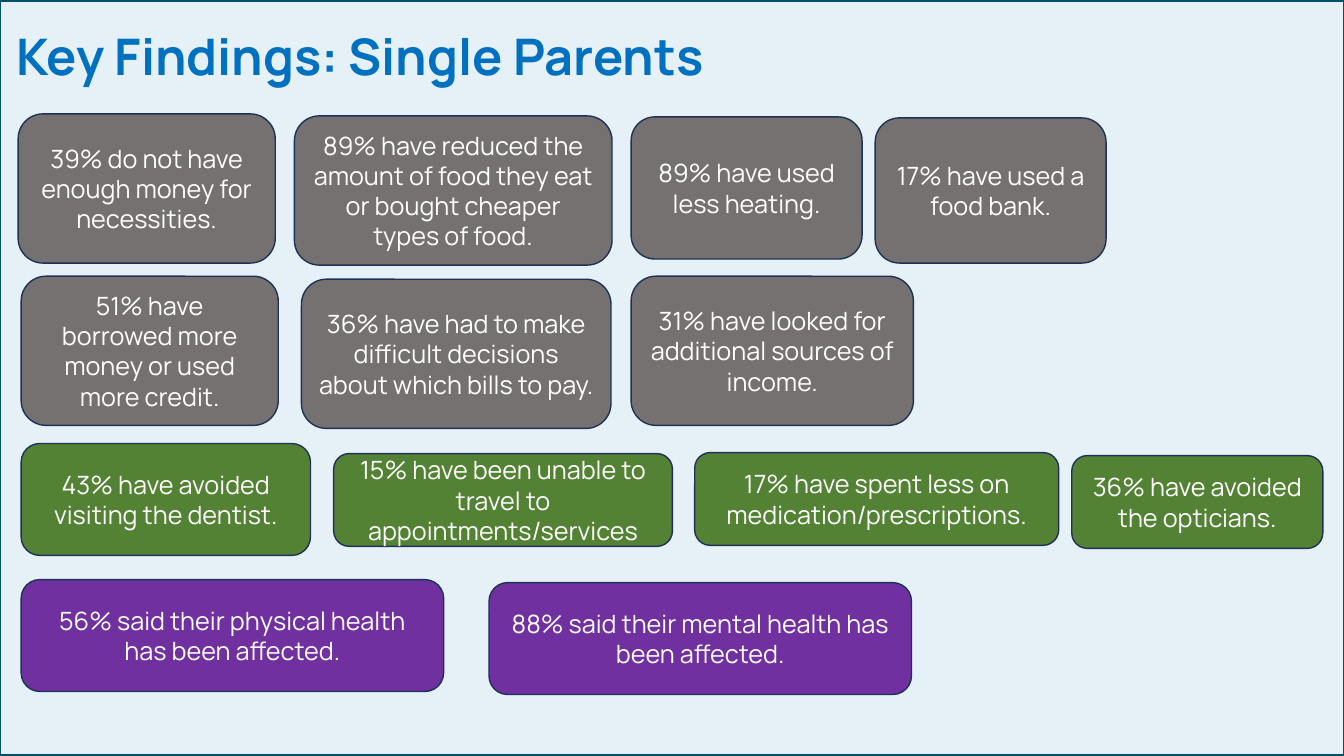
from dataclasses import dataclass

from pptx import Presentation
from pptx.dml.color import RGBColor
from pptx.enum.shapes import MSO_SHAPE as Shape
from pptx.enum.text import MSO_ANCHOR as Anchor, MSO_AUTO_SIZE as AutoSize, PP_ALIGN as Align
from pptx.slide import Slide
from pptx.text.text import Font
from pptx.util import Inches, Length, Pt

BACKGROUND = RGBColor(0xE6, 0xF1, 0xF7)
FRAME_TEAL = RGBColor(0x00, 0x4F, 0x6B)
TITLE_BLUE = RGBColor(0x00, 0x70, 0xC0)
OUTLINE_NAVY = RGBColor(0x1E, 0x32, 0x56)
MONEY_GREY = RGBColor(0x76, 0x71, 0x71)
ACCESS_GREEN = RGBColor(0x54, 0x82, 0x35)
HEALTH_PURPLE = RGBColor(0x70, 0x30, 0xA0)
WHITE = RGBColor(0xFF, 0xFF, 0xFF)

TYPEFACE = "Manrope"
COLUMNS, ROWS = 133.3, 75
CELL = Inches(0.1)


@dataclass(frozen=True)
class Box:
    """Left and width in grid columns, top and height in grid rows."""
    left: float
    top: float
    width: float
    height: float

    def lengths(self) -> list[Length]:
        return [grid(n) for n in (self.left, self.top, self.width, self.height)]


@dataclass(frozen=True)
class Finding:
    text: str
    box: Box


@dataclass(frozen=True)
class Theme:
    colour: RGBColor
    findings: tuple[Finding, ...]


THEMES = (
    Theme(MONEY_GREY, (
        Finding("39% do not have enough money for necessities.", Box(1.8, 11.3, 25.5, 14.8)),
        Finding("89% have reduced the amount of food they eat or bought cheaper types of food.",
                Box(29.2, 11.5, 31.5, 14.8)),
        Finding("89% have used less heating.", Box(62.6, 11.6, 22.9, 14.1)),
        Finding("17% have used a food bank.", Box(86.8, 11.7, 22.9, 14.4)),
        Finding("51% have borrowed more money or used more credit.", Box(2.1, 27.4, 25.5, 14.8)),
        Finding("36% have had to make difficult decisions about which bills to pay.",
                Box(29.9, 27.7, 30.7, 14.8)),
        Finding("31% have looked for additional sources of income.", Box(62.6, 27.4, 28, 14.8)),
    )),
    Theme(ACCESS_GREEN, (
        Finding("43% have avoided visiting the dentist.", Box(2.1, 44, 28.7, 11.1)),
        Finding("15% have been unable to travel to appointments/services", Box(33.1, 45, 33.6, 9.2)),
        Finding("17% have spent less on medication/prescriptions.", Box(68.9, 44.9, 36.1, 9.2)),
        Finding("36% have avoided the opticians.", Box(106.3, 45.2, 24.9, 9.2)),
    )),
    Theme(HEALTH_PURPLE, (
        Finding("56% said their physical health has been affected.", Box(2.1, 57.5, 41.9, 11.1)),
        Finding("88% said their mental health has been affected.", Box(48.5, 57.8, 41.9, 11.1)),
    )),
)


def grid(cells: float) -> Length:
    return Length(round(cells * CELL))


def style_font(font: Font, size: int, colour: RGBColor, bold: bool = False) -> None:
    font.name = TYPEFACE
    font.size = Pt(size)
    font.bold = bold
    font.color.rgb = colour


def draw_frame(slide: Slide) -> None:
    frame = slide.shapes.add_shape(Shape.RECTANGLE, *Box(-0.1, 0, COLUMNS + 0.2, ROWS).lengths())
    frame.shadow.inherit = False
    frame.fill.background()
    frame.line.color.rgb = FRAME_TEAL
    frame.line.width = Pt(3)


def draw_title(slide: Slide, text: str) -> None:
    title = slide.shapes.add_textbox(*Box(0, 1.3, 96.9, 8.4).lengths()).text_frame
    title.margin_left = title.margin_right = grid(1.6)
    title.margin_top = title.margin_bottom = grid(1.2)
    title.word_wrap = True
    title.auto_size = AutoSize.SHAPE_TO_FIT_TEXT
    title.text = text
    style_font(title.paragraphs[0].runs[0].font, 36, TITLE_BLUE, bold=True)


def draw_finding(slide: Slide, finding: Finding, colour: RGBColor) -> None:
    card = slide.shapes.add_shape(Shape.ROUNDED_RECTANGLE, *finding.box.lengths())
    card.shadow.inherit = False
    card.fill.solid()
    card.fill.fore_color.rgb = colour
    card.line.color.rgb = OUTLINE_NAVY
    card.line.width = Pt(1)
    message = card.text_frame
    message.word_wrap = True
    message.vertical_anchor = Anchor.MIDDLE
    message.text = finding.text
    paragraph = message.paragraphs[0]
    paragraph.alignment = Align.CENTER
    style_font(paragraph.runs[0].font, 18, WHITE)


def main() -> None:
    deck = Presentation()
    deck.slide_width, deck.slide_height = grid(COLUMNS), grid(ROWS)
    slide = deck.slides.add_slide(deck.slide_layouts[6])
    slide.background.fill.solid()
    slide.background.fill.fore_color.rgb = BACKGROUND
    draw_frame(slide)
    draw_title(slide, "Key Findings: Single Parents")
    for theme in THEMES:
        for finding in theme.findings:
            draw_finding(slide, finding, theme.colour)
    deck.save("out.pptx")


if __name__ == "__main__":
    main()
